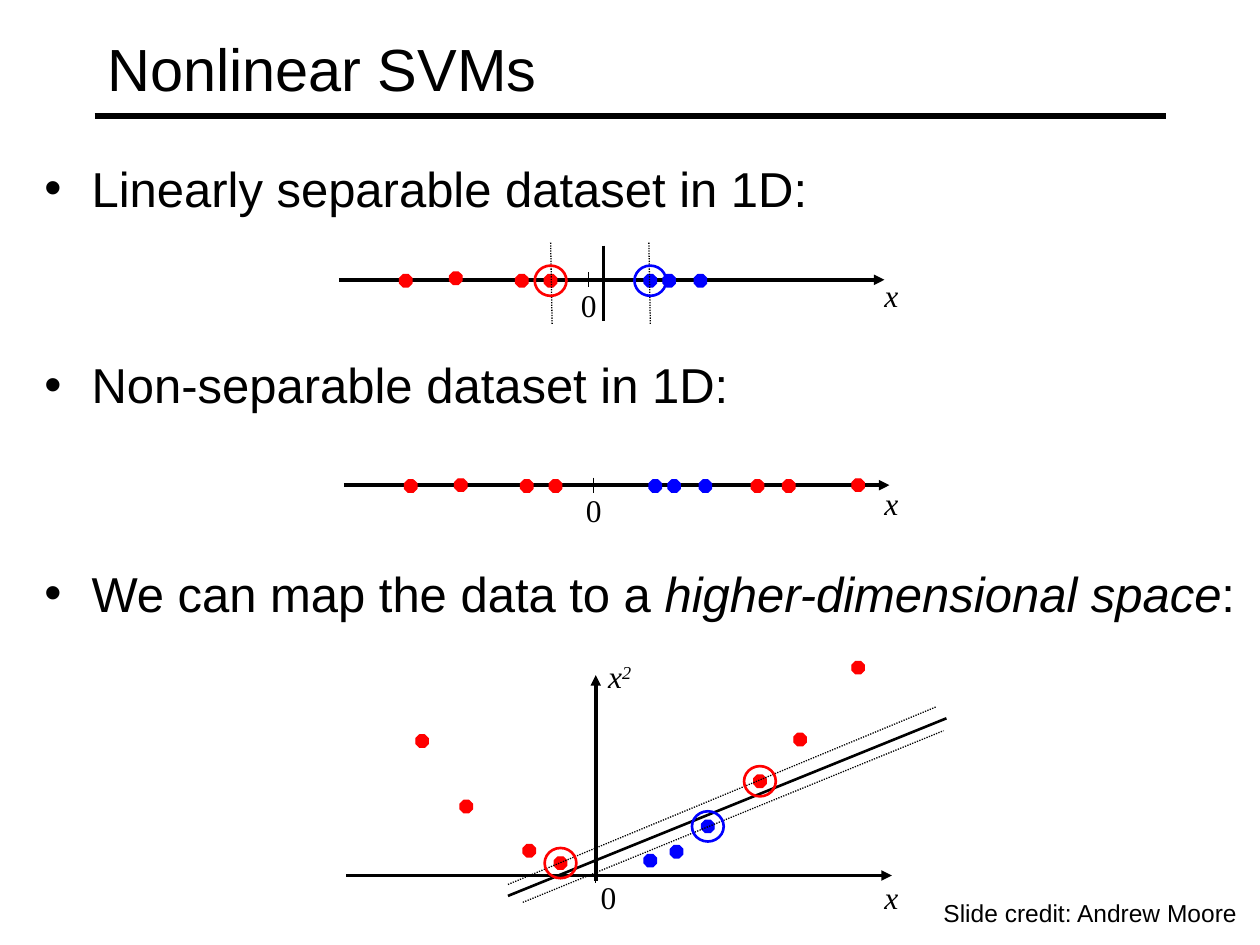
from lxml.etree import SubElement
from pptx import Presentation
from pptx.dml.color import RGBColor
from pptx.enum.dml import MSO_LINE
from pptx.enum.shapes import MSO_CONNECTOR, MSO_SHAPE
from pptx.enum.text import MSO_ANCHOR, MSO_AUTO_SIZE, PP_ALIGN
from pptx.oxml.ns import qn
from pptx.util import Cm, Pt

COLORS = {"ink": "000000", "red": "FF0000", "blue": "0000FF"}
SANS, SERIF = "Arial", "Times New Roman"

TITLE = "Nonlinear SVMs"
BULLETS = [
    (0, [("Linearly separable dataset in 1D:", False)]),
    (78.5, [("Non-separable dataset in 1D:", False)]),
    (85.5, [("We can map the data to a ", False),
            ("higher-dimensional space", True), (":", False)]),
]
CREDIT = "Slide credit: Andrew Moore"

AXIS_LENGTH, ORIGIN_OFFSET, TICK = 11, 5.03, 0.15
DOT = (0.25, 0.25)
RING = (0.64, 0.61)
X_LABEL_LEFT = 17.58

PLOTS = [
    {
        "axis": (6.83, 5.64), "zero": (11.46, 5.64), "x_top": 5.44,
        "red": [(8.18, 5.66), (9.19, 5.61), (10.52, 5.66), (11.1, 5.66)],
        "blue": [(13.11, 5.66), (13.49, 5.66), (14.12, 5.66)],
        "support": [(11.1, 5.66), (13.11, 5.66)],
        "boundary": (12.17, 4.95, 12.17, 6.48),
        "margins": [(13.11, 6.53, 13.08, 4.88), (11.13, 6.53, 11.1, 4.88)],
    },
    {
        "axis": (6.93, 9.78), "zero": (11.56, 9.78), "x_top": 9.63,
        "red": [(8.28, 9.8), (9.29, 9.78), (10.62, 9.8), (11.2, 9.8),
                (15.27, 9.8), (15.9, 9.8), (17.3, 9.78)],
        "blue": [(13.21, 9.8), (13.59, 9.8), (14.22, 9.8)],
    },
    {
        "axis": (6.98, 17.65), "zero": (11.86, 17.58), "x_top": 17.58,
        "red": [(8.51, 14.94), (9.4, 16.26), (10.67, 17.15), (11.3, 17.4),
                (15.32, 15.75), (16.13, 14.91), (17.3, 13.46)],
        "blue": [(13.11, 17.35), (13.64, 17.17), (14.27, 16.66)],
        "support": [(11.3, 17.4), (14.27, 16.66), (15.32, 15.75)],
        "boundary": (10.24, 18.06, 19.08, 14.48),
        "margins": [(10.24, 17.83, 18.87, 14.25), (10.54, 18.19, 19.02, 14.73)],
        "vertical": (12.01, 17.75, 12.01, 13.61), "square_label": (12.01, 13.13),
    },
]


def color(name):
    return RGBColor.from_string(COLORS[name])


def set_font(font, size, face, italic=None):
    font.size, font.name, font.italic = Pt(size), face, italic
    font.color.rgb = color("ink")


def place(shape, left, top, width, height):
    shape.left, shape.top, shape.width, shape.height = map(Cm, (left, top, width, height))


def add_line(slide, ends, weight, dotted=False, arrow=False):
    line = slide.shapes.add_connector(MSO_CONNECTOR.STRAIGHT, *map(Cm, ends))
    line.line.color.rgb = color("ink")
    line.line.width = Pt(weight)
    if dotted:
        line.line.dash_style = MSO_LINE.ROUND_DOT
    if arrow:
        SubElement(line.line._get_or_add_ln(), qn("a:tailEnd"), type="triangle")
    SubElement(line._element.spPr, qn("a:effectLst"))


def add_mark(slide, kind, center, size, hue, weight, filled):
    corner = [middle - side / 2 for middle, side in zip(center, size)]
    mark = slide.shapes.add_shape(kind, *map(Cm, (*corner, *size)))
    mark.shadow.inherit = False
    mark.line.color.rgb = color(hue)
    mark.line.width = Pt(weight)
    if filled:
        mark.fill.solid()
        mark.fill.fore_color.rgb = color(hue)
    else:
        mark.fill.background()


def add_label(slide, text, left, top, width=1.27, height=1.02,
              size=18, face=SERIF, italic=None, wrap=True):
    frame = slide.shapes.add_textbox(*map(Cm, (left, top, width, height))).text_frame
    frame.word_wrap = wrap
    label = frame.paragraphs[0]
    label.add_run().text = text
    set_font(label.font, size, face, italic)
    return label


def add_plot(slide, plot):
    left, y = plot["axis"]
    origin = left + ORIGIN_OFFSET
    add_line(slide, (left, y, left + AXIS_LENGTH, y), 2, arrow=True)
    add_line(slide, (origin, y - TICK, origin, y + TICK), 0.75)
    if "vertical" in plot:
        add_line(slide, plot["vertical"], 2, arrow=True)
        square = add_label(slide, "x", *plot["square_label"], italic=True)
        exponent = square.add_run()
        exponent.text = "2"
        exponent.font._element.set("baseline", "30000")
    for hue in ("red", "blue"):
        for center in plot[hue]:
            add_mark(slide, MSO_SHAPE.OCTAGON, center, DOT, hue, 0.75, True)
    if "boundary" in plot:
        add_line(slide, plot["boundary"], 1.5)
    for margin in plot.get("margins", []):
        add_line(slide, margin, 0.75, dotted=True)
    for center in plot.get("support", []):
        hue = "red" if center in plot["red"] else "blue"
        add_mark(slide, MSO_SHAPE.OVAL, center, RING, hue, 1.5, False)
    add_label(slide, "0", *plot["zero"], width=0.97)
    add_label(slide, "x", X_LABEL_LEFT, plot["x_top"], italic=True)


def add_bullets(body):
    place(body, 0.64, 3.07, 24.77, 13.97)
    frame = body.text_frame
    frame.auto_size = MSO_AUTO_SIZE.NONE
    for index, (gap, pieces) in enumerate(BULLETS):
        bullet = frame.add_paragraph() if index else frame.paragraphs[0]
        bullet.space_before = Pt(gap)
        set_font(bullet.font, 28, SANS)
        for text, italic in pieces:
            run = bullet.add_run()
            run.text = text
            if italic:
                run.font.italic = True


def main():
    deck = Presentation()
    deck.slide_width, deck.slide_height = Cm(25.4), Cm(19.05)
    slide = deck.slides.add_slide(deck.slide_layouts[1])

    title = slide.shapes.title
    place(title, 1.91, 0.2, 21.59, 2.34)
    title.text_frame.text = TITLE
    title.text_frame.auto_size = MSO_AUTO_SIZE.NONE
    title.text_frame.vertical_anchor = MSO_ANCHOR.MIDDLE
    heading = title.text_frame.paragraphs[0]
    heading.alignment = PP_ALIGN.LEFT
    set_font(heading.font, 34, SANS)
    add_line(slide, (1.91, 2.34, 23.5, 2.34), 3)

    add_bullets(slide.placeholders[1])
    for plot in PLOTS:
        add_plot(slide, plot)
    add_label(slide, CREDIT, 18.77, 17.98, 6.43, 0.84, size=14, face=SANS, wrap=False)
    deck.save("out.pptx")


if __name__ == "__main__":
    main()
